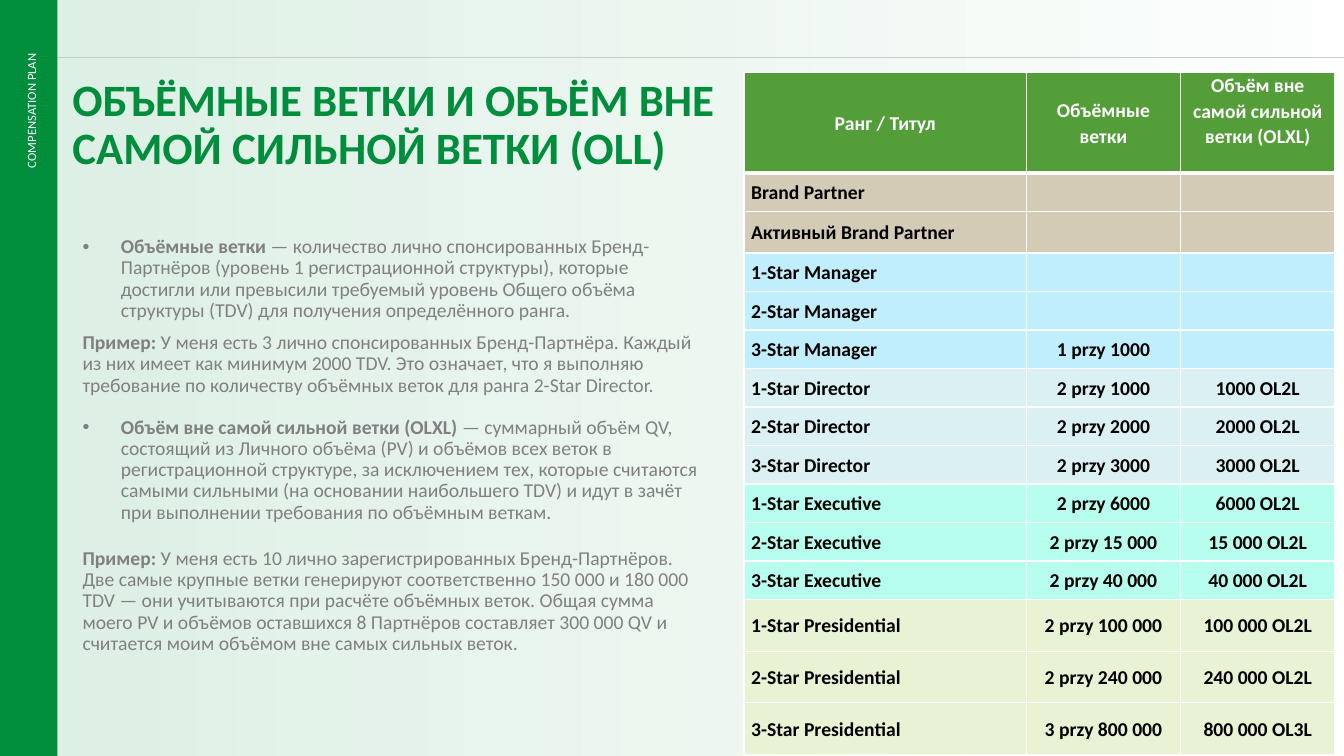
import pptx
import pptx.util
import pptx.dml.color
import pptx.enum.shapes
import pptx.enum.text
import pptx.oxml
import pptx.oxml.ns
from lxml import etree

Inches, Pt = pptx.util.Inches, pptx.util.Pt
RGB = pptx.dml.color.RGBColor.from_string
qn = pptx.oxml.ns.qn
SHAPE = pptx.enum.shapes.MSO_SHAPE
ALIGN = pptx.enum.text.PP_ALIGN
MID = pptx.enum.text.MSO_ANCHOR.MIDDLE
TOP = pptx.enum.text.MSO_ANCHOR.TOP

# Content
SIDE = "COMPENSATION PLAN"
TITLE = "ОБЪЁМНЫЕ ВЕТКИ И ОБЪЁМ ВНЕ САМОЙ СИЛЬНОЙ ВЕТКИ (OLL)"
# bold lead, rest, bulleted, space before
BODY = [
    ("Объёмные ветки", " — количество лично спонсированных Бренд-Партнёров (уровень 1 "
     "регистрационной структуры), которые достигли или превысили требуемый уровень Общего "
     "объёма структуры (TDV) для получения определённого ранга.", True, 0),
    ("Пример:", " У меня есть 3 лично спонсированных Бренд-Партнёра. Каждый из них имеет как "
     "минимум 2000 TDV. Это означает, что я выполняю требование по количеству объёмных веток "
     "для ранга 2-Star Director.", False, 8),
    ("Объём вне самой сильной ветки (OLXL)", " — суммарный объём QV, состоящий из Личного "
     "объёма (PV) и объёмов всех веток в регистрационной структуре, за исключением тех, "
     "которые считаются самыми сильными (на основании наибольшего TDV) и идут в зачёт при "
     "выполнении требования по объёмным веткам.", True, 15),
    ("Пример:", " У меня есть 10 лично зарегистрированных Бренд-Партнёров. Две самые крупные "
     "ветки генерируют соответственно 150 000 и 180 000 TDV — они учитываются при расчёте "
     "объёмных веток. Общая сумма моего PV и объёмов оставшихся 8 Партнёров составляет "
     "300 000 QV и считается моим объёмом вне самых сильных веток.", False, 18),
]
HEAD = ("Ранг / Титул", "Объёмные ветки", "Объём вне самой сильной ветки (OLXL)")
# group, row height, rows
RANKS = [
    ("partner", 0.38, [("Brand Partner", "", "")]),
    ("partner", 0.41, [("Активный Brand Partner", "", "")]),
    ("manager", 0.38, [("1-Star Manager", "", ""),
                       ("2-Star Manager", "", ""),
                       ("3-Star Manager", "1 przy 1000", "")]),
    ("director", 0.38, [("1-Star Director", "2 przy 1000", "1000 OL2L"),
                        ("2-Star Director", "2 przy 2000", "2000 OL2L"),
                        ("3-Star Director", "2 przy 3000", "3000 OL2L")]),
    ("executive", 0.38, [("1-Star Executive", "2 przy 6000", "6000 OL2L"),
                         ("2-Star Executive", "2 przy 15 000", "15 000 OL2L"),
                         ("3-Star Executive", "2 przy 40 000", "40 000 OL2L")]),
    ("president", 0.51, [("1-Star Presidential", "2 przy 100 000", "100 000 OL2L"),
                         ("2-Star Presidential", "2 przy 240 000", "240 000 OL2L"),
                         ("3-Star Presidential", "3 przy 800 000", "800 000 OL3L")]),
]
COLS = (2.8, 1.53, 1.53)
HIGH = 6.77

THEME = {
    "font": "Calibri", "green": "008E3D", "grey": "808080", "rule": "BFBFBF",
    "white": "FFFFFF", "black": "000000", "head": "549E39", "partner": "D3CBB6",
    "manager": "C1EEFC", "director": "DBF0F3", "executive": "B8FEEF", "president": "E8F3D4",
    "title_size": 32, "text_size": 14, "side_size": 9,
}


def color(name):
    return RGB(THEME[name])


def put(para, text, size="text_size", tint="black", bold=False, align=None, gap=None):
    """Add one formatted run to a paragraph."""
    if align is not None:
        para.alignment = align
    if gap is not None:
        para.line_spacing = gap
    run = para.add_run()
    run.text = text
    font = run.font
    font.name, font.size, font.bold = THEME["font"], Pt(THEME[size]), bold
    font.color.rgb = color(tint)


def fade(node, share):
    for tone in node.iter(qn("a:srgbClr")):
        etree.SubElement(tone, qn("a:alpha")).set("val", str(share * 1000))


def block(slide, x, y, w, h):
    shape = slide.shapes.add_shape(SHAPE.RECTANGLE, Inches(x), Inches(y), Inches(w), Inches(h))
    shape.shadow.inherit = False
    shape.line.fill.background()
    return shape


def frame(slide, x, y, w, h, turn=0):
    box = slide.shapes.add_textbox(Inches(x), Inches(y), Inches(w), Inches(h))
    box.rotation = turn
    box.text_frame.word_wrap = True
    return box.text_frame


def bullet(para):
    props = para._p.get_or_add_pPr()
    props.set("marL", str(Inches(0.38)))
    props.set("indent", str(Inches(-0.38)))
    etree.SubElement(props, qn("a:buFont")).set("typeface", "Arial")
    etree.SubElement(props, qn("a:buChar")).set("char", "•")


def border(cell, base):
    props = cell._tc.get_or_add_tcPr()
    for spot, (side, wide) in enumerate((("L", 1), ("R", 1), ("T", 1), ("B", base))):
        edge = etree.Element(qn("a:ln" + side), w=str(Pt(wide)))
        fill = etree.SubElement(edge, qn("a:solidFill"))
        etree.SubElement(fill, qn("a:srgbClr"), val=THEME["white"])
        props.insert(spot, edge)


def backdrop(slide):
    # Tinted page
    page = block(slide, 0.57, 0, 12.76, 7.5)
    page.fill.gradient()
    page.fill.gradient_angle = 0
    for stop, spot, share in zip(page.fill.gradient_stops, (0, 0.99), (13, 0)):
        stop.color.rgb = color("green")
        stop.position = spot
        fade(stop._gs, share)
    # Top rule with a pale line over it
    for tint, share in (("rule", 100), ("white", 18)):
        line = slide.shapes.add_connector(pptx.enum.shapes.MSO_CONNECTOR.STRAIGHT,
                                          Inches(0.56), Inches(0.57), Inches(13.33), Inches(0.57))
        line.line.color.rgb = color(tint)
        line.line.width = Pt(0.5)
        if share < 100:
            fade(line._element.spPr, share)
        etree.SubElement(line._element.spPr, qn("a:effectLst"))
    # Side band
    band = block(slide, 0, 0, 0.57, 7.53)
    band.fill.solid()
    band.fill.fore_color.rgb = color("green")
    put(frame(slide, -0.51, 1.13, 1.64, 0.25, turn=270).paragraphs[0], SIDE,
        size="side_size", tint="white", align=ALIGN.RIGHT)


def story(slide):
    text = frame(slide, 0.72, 2.3, 6.39, 4.19)
    for spot, (lead, rest, dot, space) in enumerate(BODY):
        para = text.add_paragraph() if spot else text.paragraphs[0]
        if dot:
            bullet(para)
        if space:
            para.space_before = Pt(space)
        put(para, lead, tint="grey", bold=True, gap=0.9)
        put(para, rest, tint="grey")
    put(frame(slide, 0.62, 0.72, 6.93, 0.49).paragraphs[0], TITLE,
        size="title_size", tint="green", bold=True, gap=0.9)


def ranks(slide):
    rows = [("head", 0.99, HEAD)]
    rows += [(group, tall, row) for group, tall, part in RANKS for row in part]
    scale = HIGH / sum(tall for _, tall, _ in rows)
    grid = slide.shapes.add_table(len(rows), len(COLS), Inches(7.38), Inches(0.72),
                                  Inches(sum(COLS)), Inches(HIGH)).table
    grid.first_row = grid.horz_banding = False
    for col, wide in zip(grid.columns, COLS):
        col.width = Inches(wide)
    for r, (group, tall, row) in enumerate(rows):
        grid.rows[r].height = Inches(tall * scale)
        top = group == "head"
        for c, text in enumerate(row):
            cell = grid.cell(r, c)
            cell.margin_left = cell.margin_right = Inches(0.07)
            cell.margin_top = cell.margin_bottom = 0
            cell.vertical_anchor = TOP if top and c == 2 else MID
            cell.fill.solid()
            cell.fill.fore_color.rgb = color(group)
            border(cell, 3 if top else 1)
            if text:
                put(cell.text_frame.paragraphs[0], text, tint="white" if top else "black",
                    bold=True, gap=1.07, align=ALIGN.CENTER if top or c else ALIGN.LEFT)


def main():
    deck = pptx.Presentation()
    deck.slide_width, deck.slide_height = Inches(13.33), Inches(7.5)
    slide = deck.slides.add_slide(deck.slide_layouts[6])
    backdrop(slide)
    story(slide)
    ranks(slide)
    deck.save("out.pptx")


if __name__ == "__main__":
    main()
